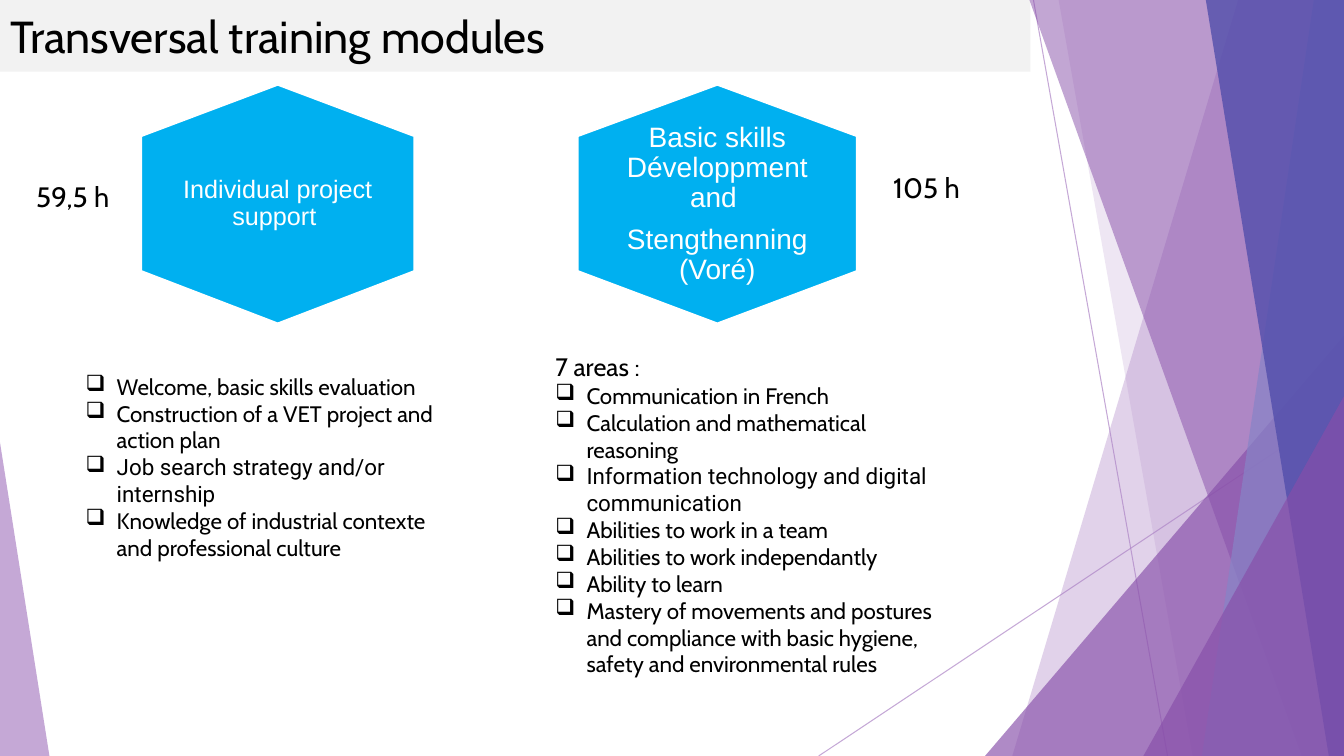
import pptx
import pptx.dml.color
import pptx.enum.text
import pptx.oxml.ns
import pptx.util
from lxml import etree

Inches, Pt = pptx.util.Inches, pptx.util.Pt
qn = pptx.oxml.ns.qn
RGB = pptx.dml.color.RGBColor.from_string
PP_ALIGN = pptx.enum.text.PP_ALIGN
MSO_ANCHOR = pptx.enum.text.MSO_ANCHOR

COLORS = {
    "lilac": "AD84C6", "purple": "874EA9", "periwinkle": "8784C7",
    "indigo": "524EAB", "blue": "00B0F0", "gray": "F2F2F2",
    "white": "FFFFFF", "black": "000000",
}


def add_polygon(points, color, opacity=100):
    """Add a borderless closed outline through points given in inches."""
    corners = [(Inches(x), Inches(y)) for x, y in points]
    builder = s.shapes.build_freeform(*corners[0])
    builder.add_line_segments(corners[1:], close=True)
    sp = builder.convert_to_shape()
    sp.shadow.inherit = False
    sp.fill.solid()
    sp.fill.fore_color.rgb = RGB(COLORS[color])
    sp.line.fill.background()
    if opacity < 100:
        clr = sp._element.spPr.find(qn("a:solidFill"))[0]
        etree.SubElement(clr, qn("a:alpha"), val=str(opacity * 1000))
    return sp


def write(p, text, size, font="Cabin", color="black", bullet=False):
    """Fill a paragraph with one formatted run."""
    if bullet:
        pPr = p._p.get_or_add_pPr()
        pPr.set("marL", str(Inches(0.31)))
        pPr.set("indent", str(-Inches(0.31)))
        etree.SubElement(pPr, qn("a:buChar"), char="❑")
    r = p.add_run()
    r.text = text
    for name, value in {"name": font, "size": Pt(size)}.items():
        setattr(r.font, name, value)
    r.font.color.rgb = RGB(COLORS[color])


prs = pptx.Presentation()
prs.slide_width, prs.slide_height = Inches(13.33), Inches(7.5)
s = prs.slides.add_slide(prs.slide_layouts[5])

# Title band
title = s.shapes.title
title.left, title.top, title.width, title.height = (
    Inches(v) for v in (0, 0, 10.22, 0.71))
title.fill.solid()
title.fill.fore_color.rgb = RGB(COLORS["gray"])
tf = title.text_frame
tf.vertical_anchor = MSO_ANCHOR.MIDDLE
p = tf.paragraphs[0]
p.alignment = PP_ALIGN.LEFT
write(p, "Transversal training modules", 32)

# Decorative lines and facets
for x1, y1, x2, y2 in [(10.25, 0, 11.58, 7.5), (13.33, 4.03, 8.12, 7.5)]:
    line = s.shapes.add_connector(
        pptx.enum.shapes.MSO_CONNECTOR.STRAIGHT,
        Inches(x1), Inches(y1), Inches(x2), Inches(y2))
    line.line.width = Pt(0.75)
    line.line.color.rgb = RGB(COLORS["lilac"])
    spPr = line._element.spPr
    clr = spPr.find(qn("a:ln")).find(qn("a:solidFill"))[0]
    etree.SubElement(clr, qn("a:alpha"), val="70000")
    etree.SubElement(spPr, qn("a:effectLst"))

R, B = 13.33, 7.5
FACETS = [
    ([(12.28, 0), (R, 0), (R, B), (10.04, B)], "lilac", 36),
    ([(10.5, 0), (R, 0), (R, B), (11.83, B)], "lilac", 20),
    ([(R, 3.33), (R, B), (9.77, B)], "purple", 66),
    ([(10.21, 0), (R, 0), (R, B), (12.91, B)], "purple", 50),
    ([(13.03, 0), (R, 0), (R, B), (11.92, B)], "periwinkle", 70),
    ([(11.96, 0), (R, 0), (R, B), (13.18, B)], "indigo", 80),
    ([(R, 3.93), (R, B), (11.34, B)], "purple", 66),
    ([(0, 4.39), (0.49, B), (0, B)], "lilac", 70),
]
for points, color, opacity in FACETS:
    add_polygon(points, color, opacity)

# Module hexagons
HEXAGONS = [
    (5.73, 2.77, 20, ["Basic skills Développment and ", "Stengthenning (Voré)"]),
    (1.4, 2.71, 18, ["Individual project support "]),
]
for left, width, size, lines in HEXAGONS:
    mid, right = left + width / 2, left + width
    sp = add_polygon([(mid, 0.84), (right, 1.35), (right, 2.69),
                      (mid, 3.21), (left, 2.69), (left, 1.35)], "blue")
    sp.line.color.rgb = RGB(COLORS["white"])
    sp.line.width = Pt(1.5)
    tf = sp.text_frame
    for name, value in {"margin_left": 0.31, "margin_right": 0.31,
                        "margin_top": 0.35, "margin_bottom": 0.35}.items():
        setattr(tf, name, Inches(value))
    tf.word_wrap = True
    tf.vertical_anchor = MSO_ANCHOR.MIDDLE
    for i, text in enumerate(lines):
        p = tf.add_paragraph() if i else tf.paragraphs[0]
        for name, value in {"alignment": PP_ALIGN.CENTER, "line_spacing": 0.9,
                            "space_after": Pt(0.4 * size)}.items():
            setattr(p, name, value)
        write(p, text, size, "Arial", "white")

# Module contents and durations: (text, size, font, bullet)
TEXT_BOXES = [
    ((5.41, 3.44, 4.13, 3.37), [
        ("7 areas :", 18, "Cabin", False),
        ("Communication in French", 16, "Cabin", True),
        ("Calculation and mathematical reasoning", 16, "Cabin", True),
        ("Information technology and digital communication", 16, "Roboto", True),
        ("Abilities to work in a team", 16, "Cabin", True),
        ("Abilities to work independantly", 16, "Cabin", True),
        ("Ability to learn", 16, "Cabin", True),
        ("Mastery of movements and postures and compliance with basic hygiene, "
         "safety and environmental rules", 16, "Cabin", True),
    ]),
    ((0.75, 3.65, 3.8, 2.26), [
        ("Welcome, basic skills evaluation", 16, "Cabin", True),
        ("Construction of a VET project and action plan", 16, "Cabin", True),
        ("Job search strategy and/or internship", 16, "Roboto", True),
        ("Knowledge of industrial contexte and professional culture",
         16, "Cabin", True),
    ]),
    ((0.26, 1.73, 1.03, 0.44), [("59,5 h", 20, "Cabin", False)]),
    ((8.76, 1.64, 0.99, 0.44), [("105 h", 20, "Cabin", False)]),
]
for box, lines in TEXT_BOXES:
    tf = s.shapes.add_textbox(*(Inches(v) for v in box)).text_frame
    tf.word_wrap = True
    tf.auto_size = pptx.enum.text.MSO_AUTO_SIZE.SHAPE_TO_FIT_TEXT
    for i, (text, size, font, bullet) in enumerate(lines):
        p = tf.add_paragraph() if i else tf.paragraphs[0]
        write(p, text, size, font, bullet=bullet)

prs.save("out.pptx")
